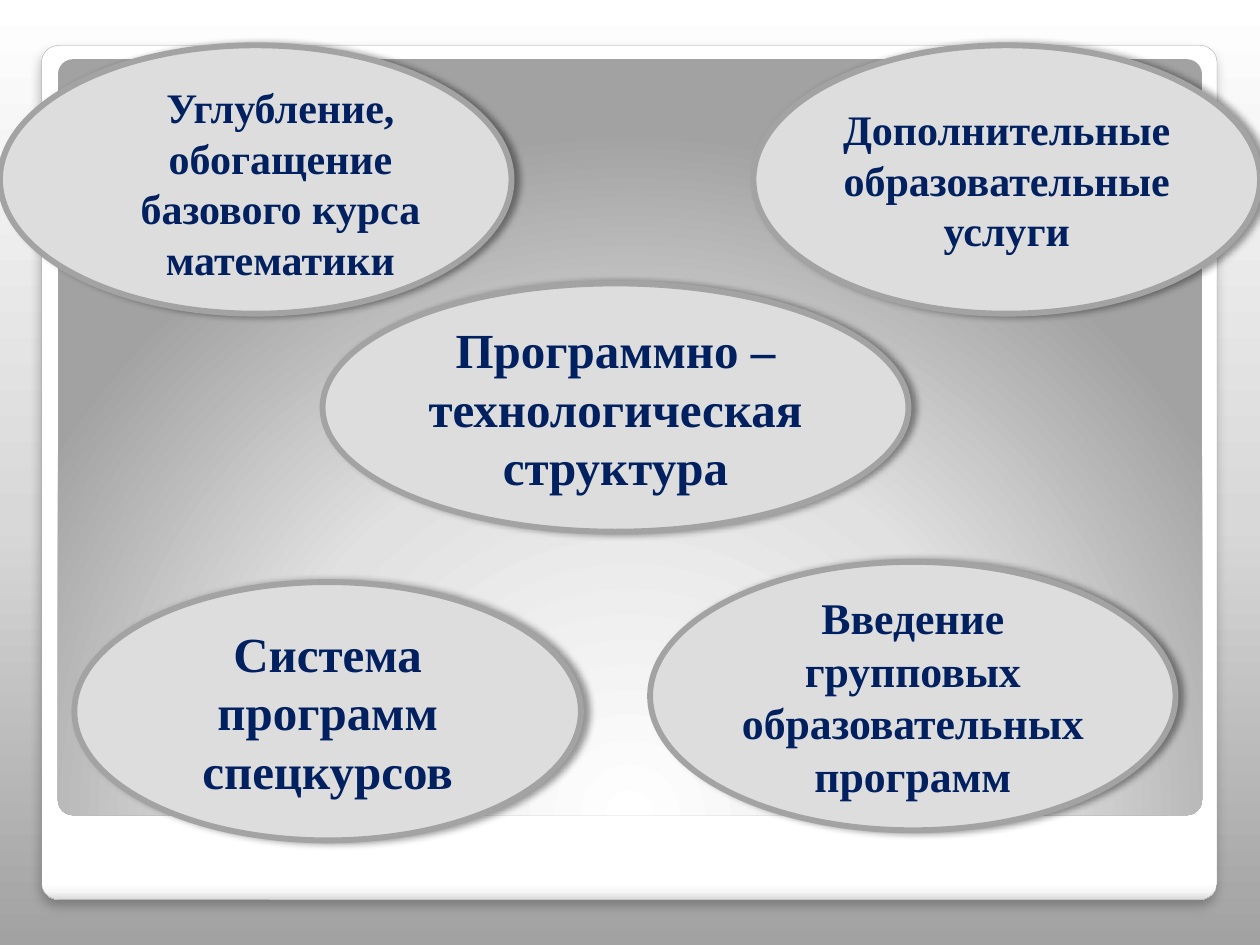
from lxml import etree
from pptx import Presentation
from pptx.dml.color import RGBColor
from pptx.enum import shapes, text
from pptx.oxml.ns import qn
from pptx.util import Inches, Pt

COLORS = {"ink": "002060", "oval": "DDDDDD", "rim": "A3A3A3", "edge": "A4A4A4",
          "dark": "A2A2A2", "light": "D8D8D8", "pale": "E1E1E1",
          "mist": "F7F7F7", "foot": "DADADA", "white": "FFFFFF", "shade": "000000"}


def set_gradient(owner, fill, stops, angle=None):
    """Fill with (percent, colour) stops: linear at angle, or circular from the lower edge."""
    fill.gradient()
    gradient = next(owner.element.iter(qn("a:gradFill")))
    for child in list(gradient):
        gradient.remove(child)
    stop_list = etree.SubElement(gradient, qn("a:gsLst"))
    for percent, name in stops:
        stop = etree.SubElement(stop_list, qn("a:gs"), pos=str(percent * 1000))
        etree.SubElement(stop, qn("a:srgbClr"), val=COLORS[name])
    if angle is not None:
        etree.SubElement(gradient, qn("a:lin"), ang=str(angle * 60000), scaled="0")
    else:
        circle = etree.SubElement(gradient, qn("a:path"))
        circle.set("path", "circle")
        etree.SubElement(circle, qn("a:fillToRect"),
                         l="50000", t="175000", r="50000", b="-75000")


def add_figure(kind, place, rim=None, rim_width=0, shadow=None):
    """Add a shape; shadow is (opacity %, blur pt, distance pt, angle)."""
    figure = page.shapes.add_shape(kind, *map(Inches, place))
    figure.shadow.inherit = False
    if rim:
        figure.line.color.rgb = RGBColor.from_string(COLORS[rim])
        figure.line.width = Pt(rim_width)
    else:
        figure.line.fill.background()
    if shadow:
        opacity, blur, distance, angle = shadow
        effects = figure.element.spPr.find(qn("a:effectLst"))
        outer = etree.SubElement(effects, qn("a:outerShdw"), blurRad=str(Pt(blur)),
                                 dist=str(Pt(distance)), dir=str(angle * 60000),
                                 algn="ctr", rotWithShape="0")
        tint = etree.SubElement(outer, qn("a:srgbClr"), val=COLORS["shade"])
        etree.SubElement(tint, qn("a:alpha"), val=str(opacity * 1000))
    return figure


deck = Presentation()
deck.slide_width, deck.slide_height = Inches(10), Inches(7.5)
page = deck.slides.add_slide(deck.slide_layouts[6])
set_gradient(page, page.background.fill,
             [(0, "dark"), (45, "light"), (100, "white")], 270)

# Framed backdrop
rounded = shapes.MSO_SHAPE.ROUNDED_RECTANGLE
frame = add_figure(rounded, (0.33, 0.36, 9.33, 6.78), "edge", 0.16, (25, 6, 4, 90))
set_gradient(frame, frame.fill,
             [(0, "white"), (98, "white"), (99, "mist"), (100, "foot")], 90)
panel = add_figure(rounded, (0.46, 0.47, 9.08, 6))
set_gradient(panel, panel.fill, [(0, "white"), (55, "pale"), (100, "dark")])
for backdrop in (frame, panel):
    backdrop.adjustments[0] = 0.02

# Ovals: place, text size, wording
ovals = [
    ((2.56, 2.25, 4.65, 1.97), 28, "Программно – технологическая структура"),
    ((0.59, 4.62, 4.02, 2.05), 28, "Система программ спецкурсов"),
    ((0, 0.36, 4.06, 2.13), 24, "Углубление, обогащение базового курса математики"),
    ((5.16, 4.46, 4.17, 2.13), 25, "Введение групповых образовательных программ"),
    ((5.98, 0.36, 4.02, 2.13), 24, "Дополнительные\vобразовательные услуги"),
]
for place, size, wording in ovals:
    oval = add_figure(shapes.MSO_SHAPE.OVAL, place, "rim", 3.35, (40, 4, 3, 0))
    oval.fill.solid()
    oval.fill.fore_color.rgb = RGBColor.from_string(COLORS["oval"])
    box = oval.text_frame
    box.word_wrap = True
    box.vertical_anchor = text.MSO_ANCHOR.MIDDLE
    para = box.paragraphs[0]
    para.text = wording
    para.alignment = text.PP_ALIGN.CENTER
    for span in para.runs:
        for name, value in {"name": "Times New Roman", "size": Pt(size), "bold": True}.items():
            setattr(span.font, name, value)
        span.font.color.rgb = RGBColor.from_string(COLORS["ink"])
    if wording.startswith("Углубление"):
        box.margin_left, box.margin_top = Inches(0.2), Inches(0.1)
        para.space_before = Pt(2.5)
        para._p.get_or_add_pPr().set("marL", str(Inches(0.29)))

deck.save("out.pptx")
